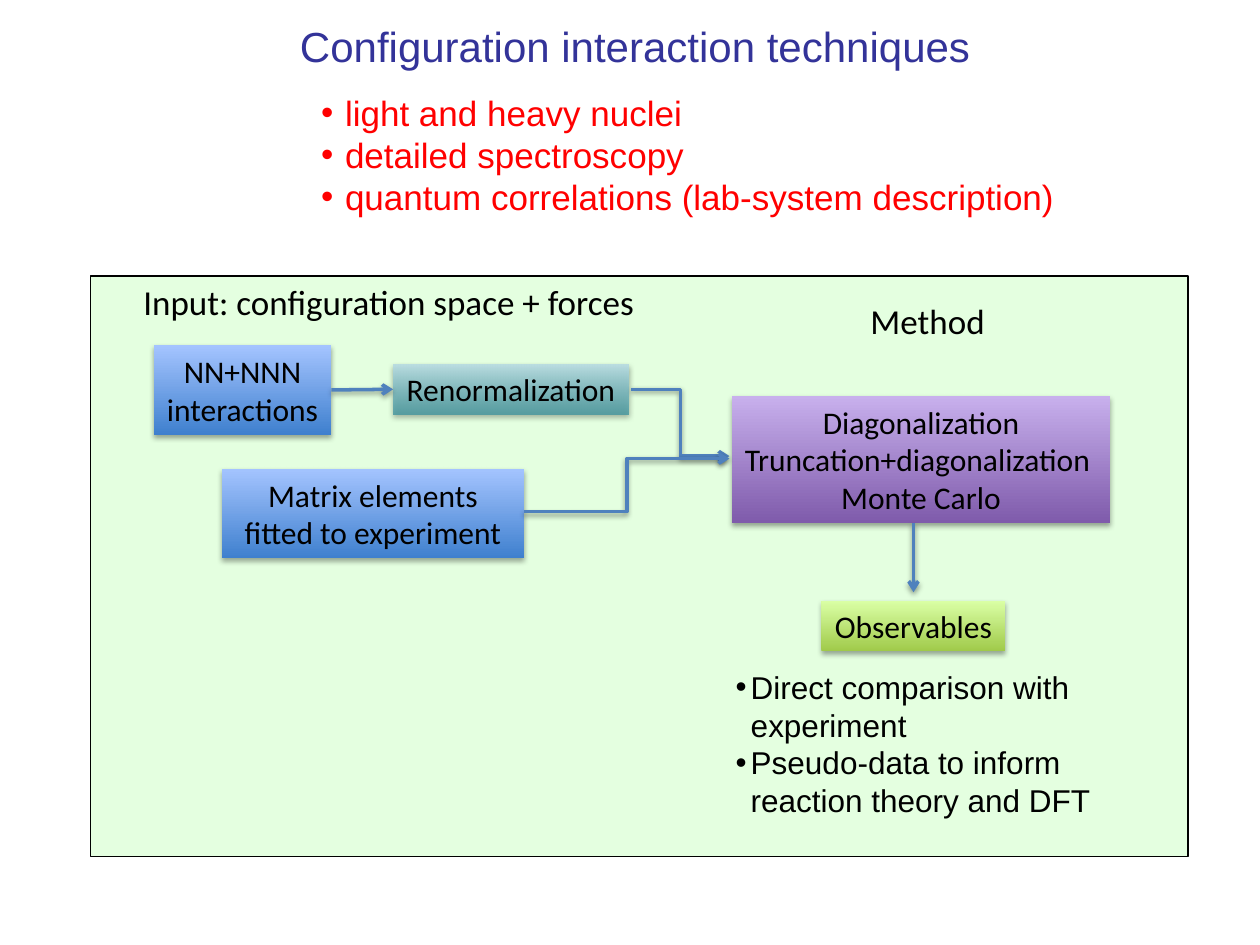
from lxml import etree
from pptx import Presentation, util as u
from pptx.dml.color import RGBColor
from pptx.enum import shapes, text
from pptx.oxml.ns import qn

COLORS = {
    "title": "333399", "highlight": "FF0000", "body": "000000",
    "panel": "E4FFE0", "arrow": "4F81BD", "shadow": "000000",
}
# bottom colour, top colour, opacity of the bottom colour in percent
GRADIENTS = {
    "input": ("3F80CE", "A4C4FF", 100),
    "renormalize": ("4597A0", "BADDE1", 81),
    "method": ("7F5BAB", "C8B0ED", 100),
    "result": ("A0CA4A", "DAFFA5", 100),
}
PANEL = (0.72, 2.19, 8.71, 4.61)

# place, lines, font, size, colour, bullet indent, wrap
LABELS = [
    ((2.19, 0.11, 5.69, 0.51), [" Configuration interaction techniques"],
     "Arial", 24, "title", 0, False),
    ((2.45, 0.68, 6.06, 1.11),
     ["light and heavy nuclei", "detailed spectroscopy",
      "quantum correlations (lab-system description)"],
     "Arial", 20, "highlight", 0.19, False),
    ((1.04, 2.18, 4.13, 0.44), ["Input: configuration space + forces"],
     "Calibri", 20, "body", 0, False),
    ((6.81, 2.33, 1.12, 0.44), ["Method"], "Calibri", 20, "body", 0, False),
    ((5.74, 5.25, 3.06, 1.31),
     ["Direct comparison with experiment",
      "Pseudo-data to inform reaction theory and DFT"],
     "Arial", 18, "body", 0.12, True),
]

# place, gradient, lines, wrap
STEPS = {
    "interactions": ((1.22, 2.74, 1.41, 0.71), "input",
                     ["NN+NNN", "interactions"], True),
    "renormalization": ((3.12, 2.89, 1.87, 0.4), "renormalize",
                        ["Renormalization"], False),
    "diagonalization": ((5.81, 3.14, 3, 1.01), "method",
                        ["Diagonalization", "Truncation+diagonalization ",
                         "Monte Carlo"], False),
    "observables": ((6.52, 4.77, 1.46, 0.4), "result", ["Observables"], False),
    "matrix": ((1.76, 3.72, 2.4, 0.71), "input",
               ["Matrix elements", "fitted to experiment"], True),
}

# kind, start, end, joined steps with their sides
STRAIGHT, ELBOW = shapes.MSO_CONNECTOR.STRAIGHT, shapes.MSO_CONNECTOR.ELBOW
ARROWS = [
    (STRAIGHT, (2.63, 3.1), (3.12, 3.1),
     (("interactions", 3), ("renormalization", 1))),
    (ELBOW, (5.01, 3.09), (5.79, 3.62), None),
    (ELBOW, (4.16, 4.06), (5.79, 3.64), None),
    (STRAIGHT, (7.25, 4.15), (7.25, 4.7), None),
]


def inches(values):
    return [u.Inches(v) for v in values]


def rgb(name):
    return RGBColor.from_string(COLORS[name])


def add_child(parent, tag, **attributes):
    return etree.SubElement(parent, qn(tag), attributes)


def add_shadow(properties, opacity, distance):
    """Put a soft downward shadow into the effect list, making it if missing."""
    effects = properties.find(qn("a:effectLst"))
    if effects is None:
        effects = add_child(properties, "a:effectLst")
    shadow = add_child(effects, "a:outerShdw", blurRad=str(u.Pt(3.1)),
                       dist=str(u.Pt(distance)), dir="5400000", rotWithShape="0")
    color = add_child(shadow, "a:srgbClr", val=COLORS["shadow"])
    add_child(color, "a:alpha", val=str(opacity * 1000))


def write(shape, lines, font, size, color, wrap, indent=0, align=None):
    frame = shape.text_frame
    frame.word_wrap = wrap
    for number, line in enumerate(lines):
        paragraph = frame.paragraphs[0] if number == 0 else frame.add_paragraph()
        paragraph.alignment = align
        if indent:
            properties = paragraph._p.get_or_add_pPr()
            properties.set("marL", str(u.Inches(indent)))
            properties.set("indent", str(-u.Inches(indent)))
            add_child(properties, "a:buFont", typeface="Arial")
            add_child(properties, "a:buChar", char="•")
        run = paragraph.add_run()
        run.text = line
        run.font.name = font
        run.font.size = u.Pt(size)
        run.font.color.rgb = rgb(color)


def add_panel(slide):
    panel = slide.shapes.add_shape(shapes.MSO_SHAPE.RECTANGLE, *inches(PANEL))
    panel.shadow.inherit = False
    panel.fill.solid()
    panel.fill.fore_color.rgb = rgb("panel")
    panel.line.color.rgb = rgb("body")
    panel.line.width = u.Pt(0.75)


def add_step(slide, place, gradient, lines, wrap):
    step = slide.shapes.add_shape(shapes.MSO_SHAPE.RECTANGLE, *inches(place))
    step.shadow.inherit = False
    step.line.fill.background()
    bottom, top, opacity = GRADIENTS[gradient]
    step.fill.gradient()
    step.fill.gradient_angle = 90
    for stop, color, position in zip(step.fill.gradient_stops, (bottom, top), (0, 1)):
        stop.color.rgb = RGBColor.from_string(color)
        stop.position = position
    if opacity < 100:
        first = next(step._element.spPr.iter(qn("a:srgbClr")))
        add_child(first, "a:alpha", val=str(opacity * 1000))
    add_shadow(step._element.spPr, 35, 1.8)
    write(step, lines, "Calibri", 18, "body", wrap, align=text.PP_ALIGN.CENTER)
    return step


def add_arrow(slide, kind, start, end, joined, steps):
    arrow = slide.shapes.add_connector(kind, *inches(start + end))
    if joined:
        (source, source_side), (target, target_side) = joined
        arrow.begin_connect(steps[source], source_side)
        arrow.end_connect(steps[target], target_side)
    arrow.line.color.rgb = rgb("arrow")
    arrow.line.width = u.Pt(2)
    add_child(arrow.line._get_or_add_ln(), "a:tailEnd", type="arrow")
    add_shadow(arrow._element.spPr, 38, 1.6)


def main():
    deck = Presentation()
    deck.slide_width, deck.slide_height = inches((10, 7.5))
    slide = deck.slides.add_slide(deck.slide_layouts[6])
    add_panel(slide)
    steps = {name: add_step(slide, *step) for name, step in STEPS.items()}
    for arrow in ARROWS:
        add_arrow(slide, *arrow, steps)
    for place, lines, font, size, color, indent, wrap in LABELS:
        label = slide.shapes.add_textbox(*inches(place))
        write(label, lines, font, size, color, wrap, indent)
    deck.save("out.pptx")


if __name__ == "__main__":
    main()
